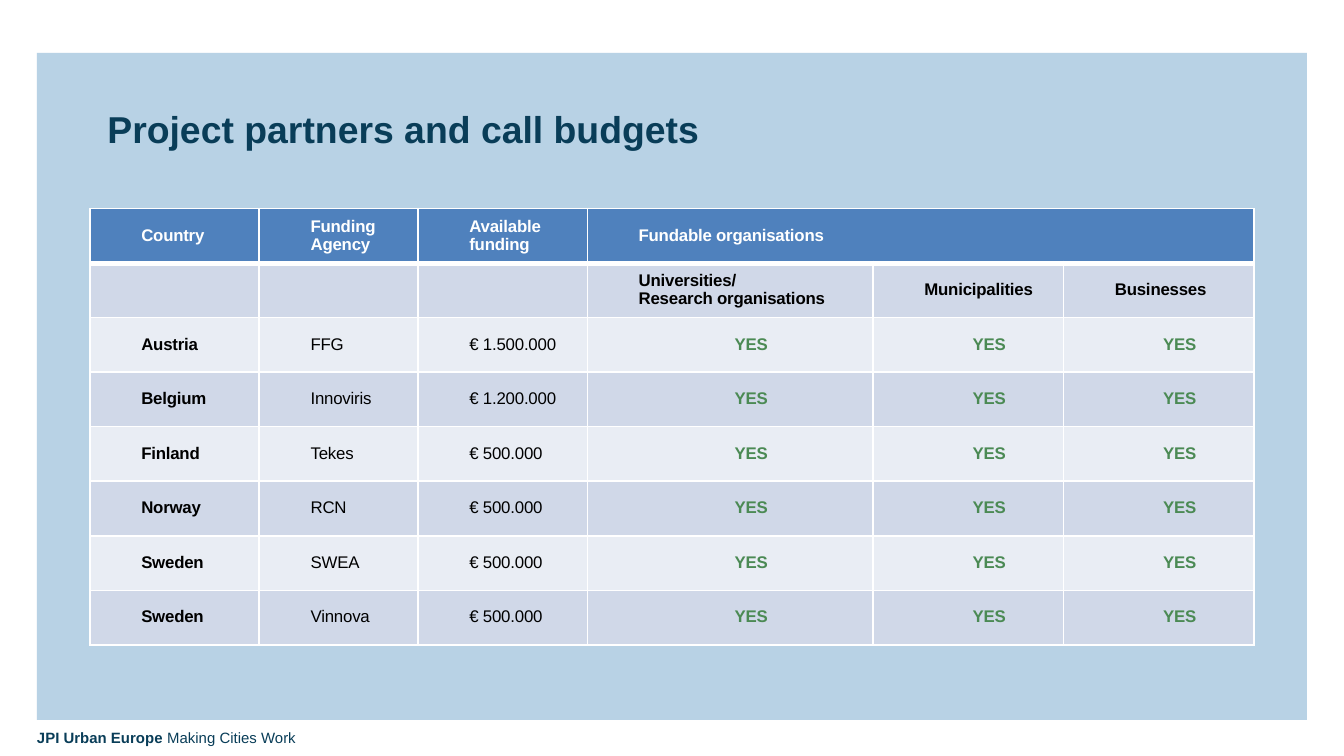
import pptx
import pptx.util
import pptx.dml.color
import pptx.enum.shapes
import pptx.enum.text
import pptx.oxml
import pptx.oxml.ns
from pptx.util import Cm, Pt

TITLE = "Project partners and call budgets"
FOOTER = [("JPI Urban Europe ", True), ("Making Cities Work", False)]
HEADER = ["Country", "Funding Agency", "Available\nfunding", "Fundable organisations", "", ""]
SUBHEADER = ["", "", "", "Universities/\nResearch organisations", "Municipalities", "Businesses"]
PARTNERS = [
    ("Austria", "FFG", "€ 1.500.000"),
    ("Belgium", "Innoviris", "€ 1.200.000"),
    ("Finland", "Tekes", "€ 500.000"),
    ("Norway", "RCN", "€ 500.000"),
    ("Sweden", "SWEA", "€ 500.000"),
    ("Sweden", "Vinnova", "€ 500.000"),
]
ROWS = [HEADER, SUBHEADER] + [[*partner, "YES", "YES", "YES"] for partner in PARTNERS]
COLUMN_WIDTHS = [3.2, 3, 3.2, 5.4, 3.6, 3.6]
ROW_HEIGHT = 1.03

NAVY, GREEN, WHITE, BLACK = "093D58", "4B8A54", "FFFFFF", "000000"
PANEL, HEADER_FILL, BANDS = "A7C7DF", "4F81BD", ["E9EDF4", "D0D8E8"]


def color(value):
    return pptx.dml.color.RGBColor.from_string(value)


def style(font, size, value, bold):
    font.name = "Arial"
    font.size = Pt(size)
    font.bold = bold
    font.color.rgb = color(value)


def add_box(page, left, top, width, height, spans, size, inset):
    box = page.shapes.add_textbox(Cm(left), Cm(top), Cm(width), Cm(height))
    frame = box.text_frame
    frame.word_wrap = True
    frame.vertical_anchor = pptx.enum.text.MSO_ANCHOR.MIDDLE
    frame.margin_left = frame.margin_right = Cm(inset)
    frame.margin_top = frame.margin_bottom = 0
    for text, bold in spans:
        span = frame.paragraphs[0].add_run()
        span.text = text
        style(span.font, size, NAVY, bold)


def add_panel(page):
    panel = page.shapes.add_shape(
        pptx.enum.shapes.MSO_SHAPE.RECTANGLE, Cm(0.7), Cm(1), Cm(24), Cm(12.6))
    panel.shadow.inherit = False
    panel.line.fill.background()
    panel.fill.solid()
    panel.fill.fore_color.rgb = color(PANEL)
    shade = panel.fill._xPr.find(".//" + pptx.oxml.ns.qn("a:srgbClr"))
    shade.append(pptx.oxml.parse_xml(
        f'<a:alpha {pptx.oxml.ns.nsdecls("a")} val="80000"/>'))


def set_borders(cell, row):
    widths = {"L": 1, "R": 1, "T": 3 if row == 1 else 1, "B": 3 if row == 0 else 1}
    for side, width in widths.items():
        cell._tc.get_or_add_tcPr().append(pptx.oxml.parse_xml(
            f'<a:ln{side} {pptx.oxml.ns.nsdecls("a")} w="{Pt(width)}">'
            f'<a:solidFill><a:srgbClr val="{WHITE}"/></a:solidFill></a:ln{side}>'))


def fill_cell(cell, text, row, column):
    set_borders(cell, row)
    cell.fill.solid()
    cell.fill.fore_color.rgb = color(HEADER_FILL if row == 0 else BANDS[row % 2])
    cell.vertical_anchor = pptx.enum.text.MSO_ANCHOR.MIDDLE
    cell.margin_left = cell.margin_right = Cm(0.18)
    cell.margin_top = cell.margin_bottom = 0
    cell.text_frame.text = text
    answer = row > 1 and column > 2
    ink = WHITE if row == 0 else GREEN if answer else BLACK
    for para in cell.text_frame.paragraphs:
        para._p.get_or_add_pPr().set("marL", str(Cm(0.79)))
        para.line_spacing = 0.96
        if answer:
            para.alignment = pptx.enum.text.PP_ALIGN.CENTER
        style(para.font, 9, ink, row < 2 or column not in (1, 2))
        for span in para.runs:
            style(span.font, 9, ink, para.font.bold)
            span._r.get_or_add_rPr().set("spc", "-10")
        if not para.runs:
            para._p.get_or_add_endParaRPr().set("sz", "900")


def add_budget_table(page):
    table = page.shapes.add_table(
        len(ROWS), len(COLUMN_WIDTHS), Cm(1.7), Cm(3.94),
        Cm(sum(COLUMN_WIDTHS)), Cm(ROW_HEIGHT * len(ROWS))).table
    for column, width in zip(table.columns, COLUMN_WIDTHS):
        column.width = Cm(width)
    for row, texts in enumerate(ROWS):
        table.rows[row].height = Cm(ROW_HEIGHT)
        for column, text in enumerate(texts):
            fill_cell(table.cell(row, column), text, row, column)
    table.cell(0, 3).merge(table.cell(0, 5))


def main():
    deck = pptx.Presentation()
    deck.slide_width, deck.slide_height = Cm(25.4), Cm(14.28)
    page = deck.slides.add_slide(deck.slide_layouts[6])
    add_panel(page)
    add_box(page, 0.7, 13.74, 6.8, 0.4, FOOTER, 8, 0)
    add_box(page, 1.78, 1.75, 16.66, 1.37, [(TITLE, True)], 20, 0.25)
    add_budget_table(page)
    deck.save("out.pptx")


if __name__ == "__main__":
    main()
